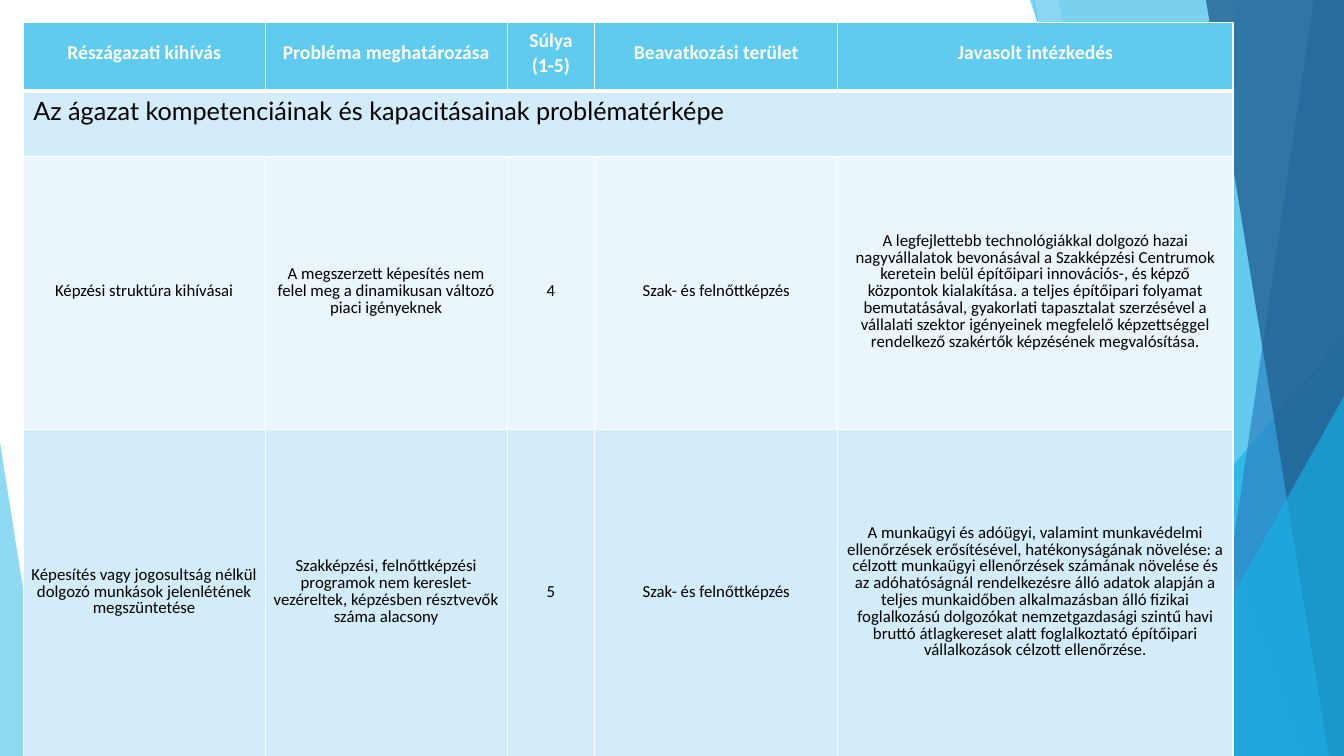
from lxml import etree
from pptx import Presentation
from pptx.dml.color import RGBColor
from pptx.enum.shapes import MSO_CONNECTOR, MSO_SHAPE
from pptx.enum.text import MSO_ANCHOR, PP_ALIGN
from pptx.oxml.ns import qn
from pptx.util import Inches, Pt

STRAIGHT = MSO_CONNECTOR.STRAIGHT
TRIANGLE = MSO_SHAPE.ISOSCELES_TRIANGLE
CENTER, LEFT = PP_ALIGN.CENTER, PP_ALIGN.LEFT
MIDDLE, TOP = MSO_ANCHOR.MIDDLE, MSO_ANCHOR.TOP

COLORS = {
    "white": "FFFFFF",
    "black": "000000",
    "sky": "5FCBEF",
    "cyan": "17B0E4",
    "blue": "2E83C3",
    "navy": "226292",
    "band": "D2ECF9",
    "pale": "EAF6FC",
}
SLIDE_WIDTH, SLIDE_HEIGHT = 13.33, 7.5
COLUMN_WIDTHS = [2.4, 2.4, 0.87, 2.41, 3.92]
ROW_HEIGHTS = [0.68, 0.65, 2.71, 3.25]

HEADINGS = ["Részágazati kihívás", "Probléma meghatározása", "Súlya\n(1-5)",
            "Beavatkozási terület", "Javasolt intézkedés"]
SECTION = "Az ágazat kompetenciáinak és kapacitásainak problématérképe"
CHALLENGES = [
    ["Képzési struktúra kihívásai",
     "A megszerzett képesítés nem felel meg a dinamikusan változó piaci igényeknek",
     "4",
     "Szak- és felnőttképzés",
     "A legfejlettebb technológiákkal dolgozó hazai nagyvállalatok bevonásával a "
     "Szakképzési Centrumok keretein belül építőipari innovációs-, és képző központok "
     "kialakítása. a teljes építőipari folyamat bemutatásával, gyakorlati tapasztalat "
     "szerzésével a vállalati szektor igényeinek megfelelő képzettséggel rendelkező "
     "szakértők képzésének megvalósítása."],
    ["Képesítés vagy jogosultság nélkül dolgozó munkások jelenlétének megszüntetése",
     "Szakképzési, felnőttképzési programok nem kereslet-vezéreltek, képzésben "
     "résztvevők száma alacsony",
     "5",
     "Szak- és felnőttképzés",
     "A munkaügyi és adóügyi, valamint munkavédelmi ellenőrzések erősítésével, "
     "hatékonyságának növelése: a célzott munkaügyi ellenőrzések számának növelése és "
     "az adóhatóságnál rendelkezésre álló adatok alapján a teljes munkaidőben "
     "alkalmazásban álló fizikai foglalkozású dolgozókat nemzetgazdasági szintű havi "
     "bruttó átlagkereset alatt foglalkoztató építőipari vállalkozások célzott "
     "ellenőrzése."],
]


def rgb(name):
    return RGBColor.from_string(COLORS[name])


def set_opacity(element, percent):
    color = next(element.spPr.iter(qn("a:srgbClr")))
    etree.SubElement(color, qn("a:alpha"), val=str(percent * 1000))


def paint(shape, color, opacity):
    shape.shadow.inherit = False
    shape.fill.solid()
    shape.fill.fore_color.rgb = rgb(color)
    shape.line.fill.background()
    set_opacity(shape._element, opacity)


def add_ray(slide, start, end):
    """Draw one thin translucent line of the background."""
    ray = slide.shapes.add_connector(STRAIGHT, *map(Inches, start + end))
    ray.line.color.rgb = rgb("sky")
    ray.line.width = Pt(0.75)
    set_opacity(ray._element, 70)
    etree.SubElement(ray._element.spPr, qn("a:effectLst"))


def add_facet(slide, top_x, bottom_x, color, opacity):
    """Fill from a slanted left edge to the right side of the slide."""
    top = -0.01
    corners = [(top_x, top), (SLIDE_WIDTH, top),
               (SLIDE_WIDTH, SLIDE_HEIGHT), (bottom_x, SLIDE_HEIGHT)]
    points = [(Inches(x), Inches(y)) for x, y in corners]
    builder = slide.shapes.build_freeform(*points[0])
    builder.add_line_segments(points[1:], close=True)
    paint(builder.convert_to_shape(), color, opacity)


def add_wedge(slide, left, top, width, apex, color, opacity):
    """Add a right triangle standing on the bottom of the slide."""
    wedge = slide.shapes.add_shape(TRIANGLE, Inches(left), Inches(top),
                                   Inches(width), Inches(SLIDE_HEIGHT - top))
    wedge.adjustments[0] = apex
    paint(wedge, color, opacity)


def add_background(slide):
    add_ray(slide, (10.25, 0), (11.58, 7.5))
    add_ray(slide, (13.33, 4.03), (8.12, 7.5))
    add_facet(slide, 12.28, 10.04, "sky", 36)
    add_facet(slide, 10.5, 11.83, "sky", 20)
    add_wedge(slide, 9.77, 3.33, 3.56, 1, "cyan", 66)
    add_facet(slide, 10.21, 12.91, "cyan", 50)
    add_facet(slide, 13.03, 11.92, "blue", 70)
    add_facet(slide, 11.96, 13.18, "navy", 80)
    add_wedge(slide, 11.34, 3.93, 1.99, 1, "cyan", 66)
    add_wedge(slide, 0, 4.39, 0.49, 0, "sky", 70)


def write(frame, text, size=12, font="Calibri", color="black", bold=False,
          align=CENTER, leading=Pt(12), gap=Pt(3)):
    frame.text = text
    for paragraph in frame.paragraphs:
        paragraph.alignment = align
        paragraph.line_spacing = leading
        paragraph.space_after = gap
        if paragraph._p is not frame.paragraphs[0]._p:
            paragraph.space_before = gap
        paragraph.font.size = Pt(size)
        paragraph.font.name = font
        paragraph.font.bold = bold
        paragraph.font.color.rgb = rgb(color)


def set_borders(cell, **widths):
    properties = cell._tc.get_or_add_tcPr()
    for side in ("L", "R", "T", "B"):
        border = etree.SubElement(properties, qn(f"a:ln{side}"),
                                  w=str(Pt(widths.get(side, 1))))
        fill = etree.SubElement(border, qn("a:solidFill"))
        etree.SubElement(fill, qn("a:srgbClr"), val=COLORS["white"])


def style_cell(cell, fill, anchor=MIDDLE, side=0.07, edge=0, **borders):
    set_borders(cell, **borders)
    cell.fill.solid()
    cell.fill.fore_color.rgb = rgb(fill)
    cell.vertical_anchor = anchor
    cell.margin_left = cell.margin_right = Inches(side)
    cell.margin_top = cell.margin_bottom = Inches(edge)


def add_problem_map(slide):
    table = slide.shapes.add_table(
        len(ROW_HEIGHTS), len(COLUMN_WIDTHS), Inches(0.23), Inches(0.22),
        Inches(sum(COLUMN_WIDTHS)), Inches(sum(ROW_HEIGHTS))).table
    for column, width in zip(table.columns, COLUMN_WIDTHS):
        column.width = Inches(width)
    for row, height in zip(table.rows, ROW_HEIGHTS):
        row.height = Inches(height)

    for cell, heading in zip(table.rows[0].cells, HEADINGS):
        style_cell(cell, "sky", B=3)
        write(cell.text_frame, heading, size=14, color="white", bold=True)

    for cell in table.rows[1].cells:
        style_cell(cell, "band", anchor=TOP, side=0.1, edge=0.05, T=3)
    section = table.cell(1, 0)
    section.merge(table.cell(1, len(COLUMN_WIDTHS) - 1))
    write(section.text_frame, SECTION, size=18, font="Lato", align=LEFT,
          leading=1.0, gap=Pt(0))

    for index, (texts, fill) in enumerate(zip(CHALLENGES, ("pale", "band")), start=2):
        for cell, text in zip(table.rows[index].cells, texts):
            style_cell(cell, fill)
            write(cell.text_frame, text)


def main():
    deck = Presentation()
    deck.slide_width = Inches(SLIDE_WIDTH)
    deck.slide_height = Inches(SLIDE_HEIGHT)
    slide = deck.slides.add_slide(deck.slide_layouts[6])
    add_background(slide)
    add_problem_map(slide)
    deck.save("out.pptx")


if __name__ == "__main__":
    main()
